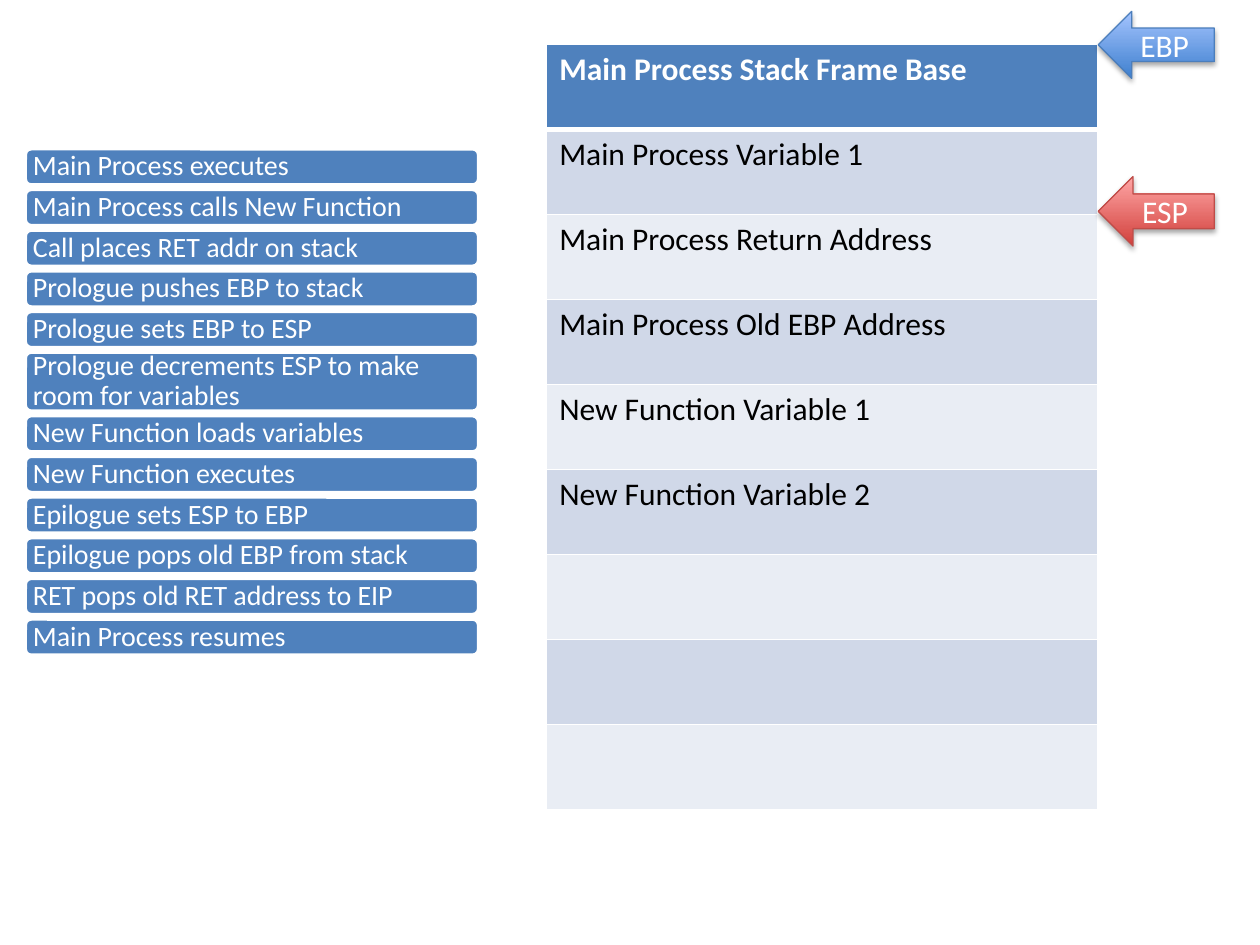
from lxml.etree import SubElement
from pptx import Presentation
from pptx.dml.color import RGBColor
from pptx.enum.shapes import MSO_SHAPE as Preset
from pptx.enum.text import MSO_ANCHOR as Anchor, PP_ALIGN as Align
from pptx.oxml import parse_xml
from pptx.oxml.ns import nsdecls, qn
from pptx.util import Cm, Pt

WHITE = RGBColor(0xFF, 0xFF, 0xFF)
BLACK = RGBColor(0x00, 0x00, 0x00)
BLUE = RGBColor(0x4F, 0x81, 0xBD)
BAND_DARK = RGBColor(0xD0, 0xD8, 0xE8)
BAND_LIGHT = RGBColor(0xE9, 0xED, 0xF4)
EBP_COLORS = (RGBColor(0x3F, 0x80, 0xCE), RGBColor(0xA4, 0xC4, 0xFF), RGBColor(0x4B, 0x7E, 0xBC))
ESP_COLORS = (RGBColor(0xD1, 0x40, 0x3C), RGBColor(0xFF, 0xA6, 0xA5), RGBColor(0xBF, 0x4C, 0x48))
FONT = "Calibri"

# Step text and number of lines
STEPS = [
    ("Main Process executes", 1),
    ("Main Process calls New Function", 1),
    ("Call places RET addr on stack", 1),
    ("Prologue pushes EBP to stack", 1),
    ("Prologue sets EBP to ESP", 1),
    ("Prologue decrements ESP to make room for variables", 2),
    ("New Function loads variables", 1),
    ("New Function executes", 1),
    ("Epilogue sets ESP to EBP", 1),
    ("Epilogue pops old EBP from stack", 1),
    ("RET pops old RET address to EIP", 1),
    ("Main Process resumes", 1),
]
STACK = [
    "Main Process Stack Frame Base",
    "Main Process Variable 1",
    "Main Process Return Address",
    "Main Process Old EBP Address",
    "New Function Variable 1",
    "New Function Variable 2",
    "", "", "",
]
# Register name, top and height in cm, colours (bottom, top, outline)
POINTERS = [("EBP", 0.23, 1.35, EBP_COLORS), ("ESP", 3.56, 1.4, ESP_COLORS)]

STEP_LEFT, STEP_TOP, STEP_WIDTH, STEP_GAP = 0.51, 3.0, 9.14, 0.09
STEP_HEIGHTS = {1: 0.73, 2: 1.19}
STEP_RADIUS = 0.12
STACK_LEFT, STACK_TOP, STACK_WIDTH, STACK_HEIGHT = 11.02, 0.9, 11.12, 15.42
POINTER_WIDTH = 2.34


def write(frame, text, size, color, bold=False):
    para = frame.paragraphs[0]
    span = para.add_run()
    span.text = text
    span.font.name = FONT
    span.font.size = Pt(size)
    span.font.bold = bold
    span.font.color.rgb = color
    return para


def set_borders(cell, top, bottom):
    """Give the cell white borders; top and bottom are widths in points."""
    sides = [("lnL", 1), ("lnR", 1), ("lnT", top), ("lnB", bottom)]
    for place, (side, width) in enumerate(sides):
        line = parse_xml(
            f'<a:{side} {nsdecls("a")} w="{Pt(width)}"><a:solidFill>'
            f'<a:srgbClr val="{WHITE}"/></a:solidFill></a:{side}>')
        cell._tc.get_or_add_tcPr().insert(place, line)


def add_stack(page):
    table = page.shapes.add_table(
        len(STACK), 1, Cm(STACK_LEFT), Cm(STACK_TOP), Cm(STACK_WIDTH), Cm(STACK_HEIGHT)).table
    table.horz_banding = False
    for index, text in enumerate(STACK):
        cell = table.cell(index, 0)
        header = index == 0
        cell.fill.solid()
        cell.fill.fore_color.rgb = BLUE if header else (BAND_LIGHT, BAND_DARK)[index % 2]
        set_borders(cell, top=3 if index == 1 else 1, bottom=3 if header else 1)
        if text:
            write(cell.text_frame, text, 18, WHITE if header else BLACK, bold=header)


def add_pointer(page, name, top, height, colors):
    low, high, outline = colors
    arrow = page.shapes.add_shape(
        Preset.LEFT_ARROW, Cm(STACK_LEFT + STACK_WIDTH), Cm(top), Cm(POINTER_WIDTH), Cm(height))
    arrow.fill.gradient()
    arrow.fill.gradient_angle = 90
    for stop, color in zip(arrow.fill.gradient_stops, (low, high)):
        stop.color.rgb = color
    arrow.line.color.rgb = outline
    arrow.line.width = Pt(0.75)
    arrow.shadow.inherit = False
    effects = arrow._element.spPr.find(qn("a:effectLst"))
    shadow = SubElement(effects, qn("a:outerShdw"), blurRad=str(Pt(3.1)), dist=str(Pt(1.8)),
                        dir="5400000", rotWithShape="0")
    tone = SubElement(shadow, qn("a:srgbClr"), val=str(BLACK))
    SubElement(tone, qn("a:alpha"), val="35000")
    arrow.text_frame.vertical_anchor = Anchor.MIDDLE
    write(arrow.text_frame, name, 18, WHITE).alignment = Align.CENTER


def add_step(page, text, top, height):
    box = page.shapes.add_shape(
        Preset.ROUNDED_RECTANGLE, Cm(STEP_LEFT), Cm(top), Cm(STEP_WIDTH), Cm(height))
    box.adjustments[0] = STEP_RADIUS / height
    box.shadow.inherit = False
    box.fill.solid()
    box.fill.fore_color.rgb = BLUE
    box.line.color.rgb = WHITE
    box.line.width = Pt(2)
    frame = box.text_frame
    frame.word_wrap = True
    frame.vertical_anchor = Anchor.MIDDLE
    frame.margin_left = frame.margin_right = Cm(0.12)
    frame.margin_top = frame.margin_bottom = Cm(0.12)
    para = write(frame, text, 16, WHITE)
    para.alignment = Align.LEFT
    para.line_spacing = 0.9


def main():
    deck = Presentation()
    deck.slide_width, deck.slide_height = Cm(25.4), Cm(19.05)
    page = deck.slides.add_slide(deck.slide_layouts[6])
    add_stack(page)
    for pointer in POINTERS:
        add_pointer(page, *pointer)
    top = STEP_TOP
    for text, lines in STEPS:
        height = STEP_HEIGHTS[lines]
        add_step(page, text, top, height)
        top += height + STEP_GAP
    deck.save("out.pptx")


if __name__ == "__main__":
    main()
